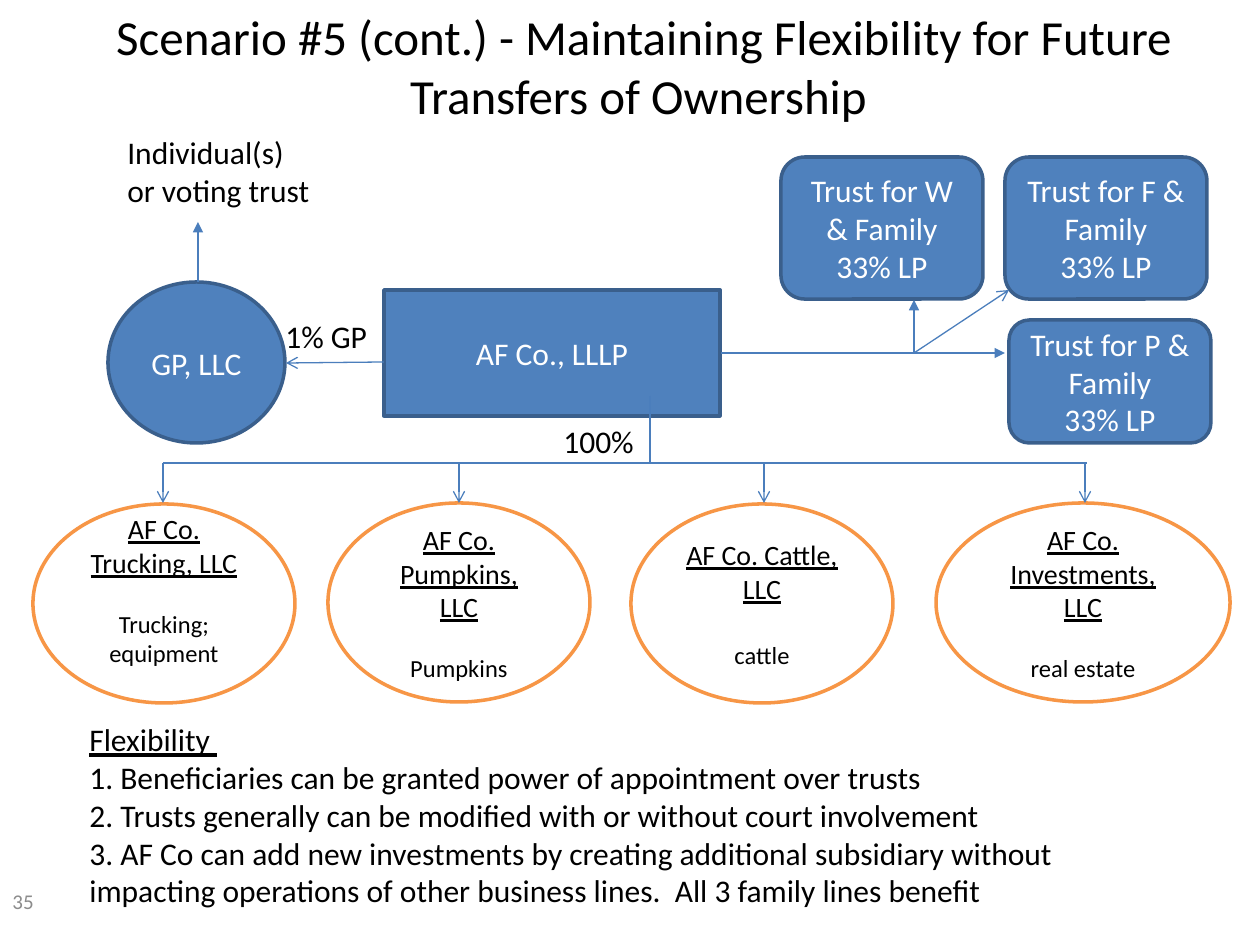
from dataclasses import dataclass
from lxml import etree
from pptx import Presentation
from pptx.dml.color import RGBColor
from pptx.enum.shapes import MSO_CONNECTOR, MSO_SHAPE
from pptx.enum.text import MSO_ANCHOR, PP_ALIGN
from pptx.oxml.ns import qn
from pptx.util import Emu, Pt

STRAIGHT = MSO_CONNECTOR.STRAIGHT
RECT, ROUND, OVAL = MSO_SHAPE.RECTANGLE, MSO_SHAPE.ROUNDED_RECTANGLE, MSO_SHAPE.OVAL
TOP, MIDDLE = MSO_ANCHOR.TOP, MSO_ANCHOR.MIDDLE
LEFT, CENTER = PP_ALIGN.LEFT, PP_ALIGN.CENTER
SCALE = 914400 / 126


@dataclass(frozen=True)
class Theme:
    font: str = "Calibri"
    black: str = "000000"
    white: str = "FFFFFF"
    grey: str = "8C8C8C"
    blue: str = "4F81BD"
    blue_edge: str = "3A5F8C"
    orange: str = "F79646"
    arrow: str = "4B7EBC"
    title: int = 28
    body: int = 18
    company: int = 16
    business: int = 14
    number: int = 12
    outline: float = 2
    thin: float = 0.75


THEME = Theme()


def px(n):
    return Emu(round(n * SCALE))


def rgb(value):
    return RGBColor.from_string(value)


def format_paragraph(p, size, color, align=LEFT, underline=False):
    p.alignment = align
    for r in p.runs:
        r.font.name = THEME.font
        r.font.size = Pt(size)
        r.font.color.rgb = rgb(color)
        r.font.underline = underline


def add_text(s, box, text, size=THEME.body, color=THEME.black, align=LEFT, anchor=TOP):
    tf = s.shapes.add_textbox(*map(px, box)).text_frame
    tf.word_wrap = True
    tf.vertical_anchor = anchor
    tf.text = text
    for p in tf.paragraphs:
        format_paragraph(p, size, color, align)
    return tf


def add_node(s, kind, box, text, fill=THEME.blue, edge=THEME.blue_edge):
    sp = s.shapes.add_shape(kind, *map(px, box))
    sp.shadow.inherit = False
    sp.fill.solid()
    sp.fill.fore_color.rgb = rgb(fill)
    sp.line.color.rgb = rgb(edge)
    sp.line.width = Pt(THEME.outline)
    tf = sp.text_frame
    tf.word_wrap = True
    tf.vertical_anchor = MIDDLE
    tf.text = text
    for p in tf.paragraphs:
        format_paragraph(p, THEME.body, THEME.white, CENTER)
    return tf


def add_subsidiary(s, box, company, business, gap, bottom):
    tf = add_node(s, OVAL, box, f"{company}\n{business}", THEME.white, THEME.orange)
    tf.margin_bottom = px(bottom)
    name, line = tf.paragraphs
    format_paragraph(name, THEME.company, THEME.black, CENTER, True)
    format_paragraph(line, THEME.business, THEME.black, CENTER)
    line.space_before = Pt(gap)


def add_line(s, start, end, head=None):
    c = s.shapes.add_connector(STRAIGHT, *map(px, start + end))
    c.line.color.rgb = rgb(THEME.arrow)
    c.line.width = Pt(THEME.thin)
    if head:
        etree.SubElement(c.line._get_or_add_ln(), qn("a:tailEnd"), type=head)
    etree.SubElement(c._element.spPr, qn("a:effectLst"))


def add_owners(s):
    add_text(s, (115, 127, 213, 89), "Individual(s) or voting trust")
    add_node(s, OVAL, (108, 282, 177, 161), "GP, LLC")
    add_line(s, (198, 282), (198, 222), "triangle")
    add_line(s, (384, 362), (286, 363), "arrow")
    add_text(s, (273, 311, 126, 50), "1% GP")

    trusts = [("W", 781, 157, 142), ("F", 1005, 157, 142), ("P", 1009, 320, 123)]
    for name, x, y, height in trusts:
        add_node(s, ROUND, (x, y, 202, height), f"Trust for {name} & Family\n33% LP")
    hub = (914, 353)
    links = [((721, 353), None), ((914, 300), "triangle"),
             ((1005, 353), "triangle"), ((1009, 290), "arrow")]
    for end, head in links:
        add_line(s, hub, end, head)


def add_subsidiaries(s):
    bus = 463
    add_text(s, (551, 416, 121, 50), "100%")
    add_line(s, (650, 396), (650, bus))
    add_line(s, (163, bus), (1087, bus))
    subsidiaries = [
        (33, 504, 262, 163, "AF Co. Trucking, LLC", "Trucking; equipment", 17, 34),
        (328, 503, 262, 459, "AF Co. Pumpkins, LLC", "Pumpkins", 17, 6),
        (631, 504, 262, 764, "AF Co. Cattle, LLC", "cattle", 20, 6),
        (936, 503, 294, 1085, "AF Co. Investments, LLC", "real estate", 17, 6),
    ]
    for x, y, width, arrow_x, company, business, gap, bottom in subsidiaries:
        add_subsidiary(s, (x, y, width, 199), company, business, gap, bottom)
        add_line(s, (arrow_x, bus), (arrow_x, 503), "arrow")


def add_flexibility(s):
    lines = [
        "Flexibility ",
        "1. Beneficiaries can be granted power of appointment over trusts",
        "2. Trusts generally can be modified with or without court involvement",
        "3. AF Co can add new investments by creating additional subsidiary without "
        "impacting operations of other business lines.  All 3 family lines benefit",
    ]
    tf = add_text(s, (77, 714, 1120, 204), "\n".join(lines))
    tf.paragraphs[0].runs[0].font.underline = True


def main():
    prs = Presentation()
    prs.slide_width, prs.slide_height = px(1260), px(945)
    s = prs.slides.add_slide(prs.slide_layouts[6])
    add_text(s, (77, 10, 1134, 111),
             "Scenario #5 (cont.) - Maintaining Flexibility for Future Transfers of Ownership ",
             THEME.title, align=CENTER, anchor=MIDDLE)
    add_node(s, RECT, (384, 290, 336, 126), "AF Co., LLLP")
    add_owners(s)
    add_subsidiaries(s)
    add_flexibility(s)
    add_text(s, (0, 876, 294, 50), "35", THEME.number, THEME.grey, anchor=MIDDLE)
    prs.save("out.pptx")


if __name__ == "__main__":
    main()
